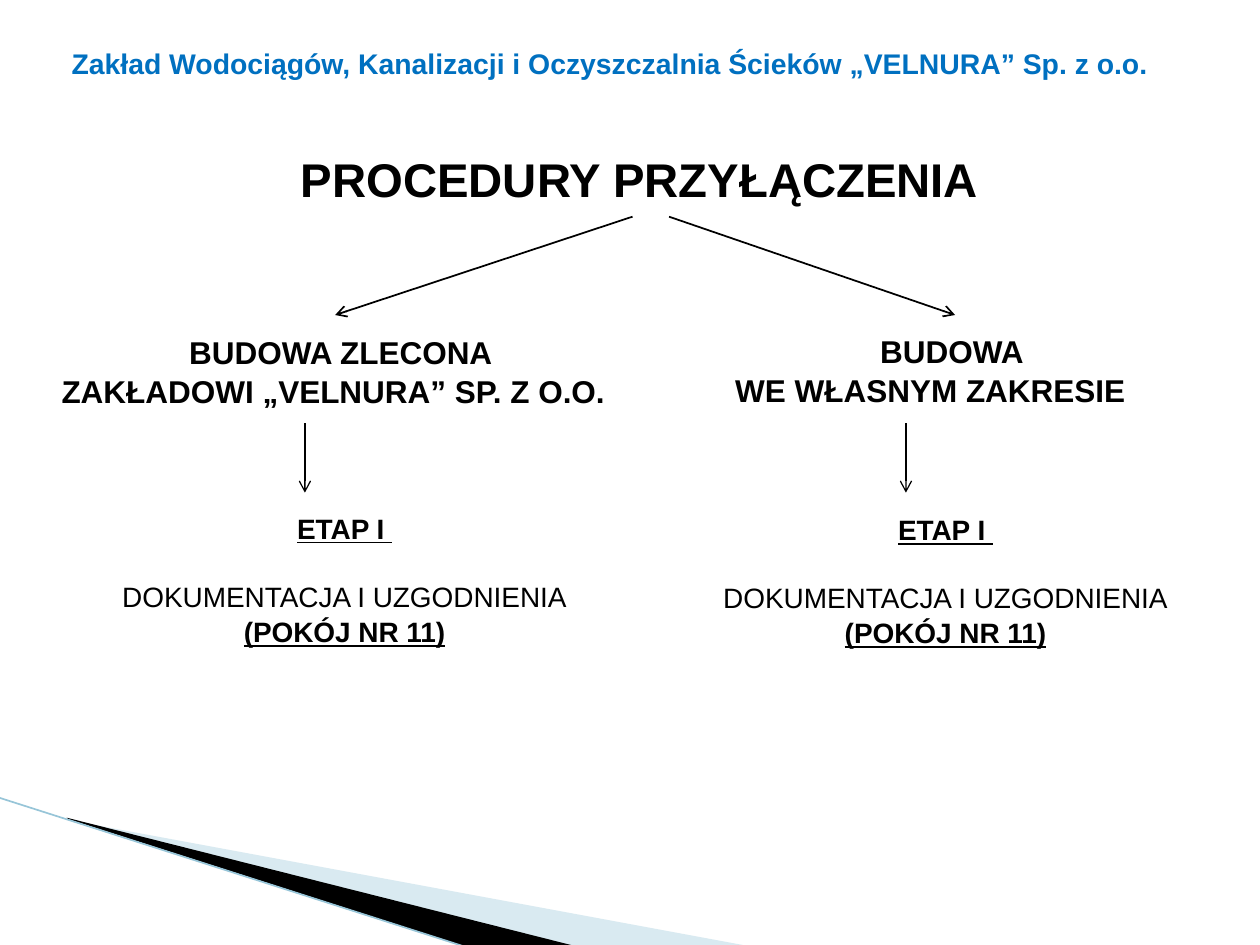
from lxml.etree import SubElement
from pptx import Presentation
from pptx.dml.color import RGBColor
from pptx.enum.shapes import MSO_CONNECTOR as Connector
from pptx.enum.text import PP_ALIGN as Align
from pptx.oxml.ns import qn
from pptx.util import Inches, Pt

BLACK, BLUE, PALE, TEAL = "000000", "0070C0", "A0CBDC", "97C5D8"

COMPANY = "Zakład Wodociągów, Kanalizacji i Oczyszczalnia Ścieków „VELNURA” Sp. z o.o."
HEADING = "PROCEDURY PRZYŁĄCZENIA"
STAGE = [("ETAP I ", True, 0), ("DOKUMENTACJA I UZGODNIENIA", False, 19), ("(POKÓJ NR 11)", True, 0)]
BRANCHES = [
    {"title": ["BUDOWA ZLECONA ", "ZAKŁADOWI „VELNURA” SP. Z O.O.\t"],
     "title_at": (0.39, 2.58, 4.69, 1.01), "stage_at": (0.39, 4, 4.69, 1.35),
     "split": ((5.02, 1.72), (2.66, 2.5)), "down_x": 2.42},
    {"title": ["BUDOWA ", "WE WŁASNYM ZAKRESIE\t"],
     "title_at": (5.63, 2.57, 3.91, 1.01), "stage_at": (5.16, 4.01, 4.69, 1.65),
     "split": ((5.31, 1.72), (7.58, 2.5)), "down_x": 7.19},
]
WEDGES = [
    ([(0.55, 6.51), (5.95, 7.51), (4.56, 7.51), (0.55, 6.5)], PALE, 40),
    ([(0.53, 6.49), (4.57, 7.51), (3.72, 7.52), (0.54, 6.5)], BLACK, 100),
]


def color(value):
    """Turn a hex string into a colour."""
    return RGBColor.from_string(value)


def add_wedge(page, points, fill, opacity):
    """Draw a filled polygon with the given opacity in percent."""
    start, *rest = [(Inches(x), Inches(y)) for x, y in points]
    builder = page.shapes.build_freeform(*start)
    builder.add_line_segments(rest, close=True)
    wedge = builder.convert_to_shape()
    wedge.shadow.inherit = False
    wedge.line.fill.background()
    wedge.fill.solid()
    wedge.fill.fore_color.rgb = color(fill)
    if opacity < 100:
        shade = wedge.fill._xPr.find(".//" + qn("a:srgbClr"))
        SubElement(shade, qn("a:alpha"), val=str(opacity * 1000))


def add_line(page, start, end, stroke, width, arrow=True):
    """Draw a straight line, with an open arrowhead at its end if asked."""
    ends = [Inches(value) for value in (*start, *end)]
    line = page.shapes.add_connector(Connector.STRAIGHT, *ends)
    line.line.color.rgb = color(stroke)
    line.line.width = Pt(width)
    if arrow:
        SubElement(line.line._get_or_add_ln(), qn("a:tailEnd"), type="arrow")
    SubElement(line._element.spPr, qn("a:effectLst"))


def add_text(page, at, lines, size, ink=BLACK, align=Align.CENTER, spacing=1.0):
    """Write lines of (text, bold, underline, space before) and return the text frame."""
    box = page.shapes.add_textbox(*map(Inches, at))
    frame = box.text_frame
    frame.word_wrap = True
    for index, (text, bold, underline, before) in enumerate(lines):
        para = frame.paragraphs[0] if index == 0 else frame.add_paragraph()
        para.text = text
        para.alignment = align
        para.line_spacing = spacing
        if before:
            para.space_before = Pt(before)
        font = para.font
        font.name, font.size, font.bold, font.underline = "Arial", Pt(size), bold, underline
        font.color.rgb = color(ink)
    return frame


def main():
    """Build the slide and save it."""
    deck = Presentation()
    deck.slide_width, deck.slide_height = Inches(10), Inches(7.5)
    page = deck.slides.add_slide(deck.slide_layouts[6])

    for wedge in WEDGES:
        add_wedge(page, *wedge)
    add_line(page, (-0.01, 6.33), (3.71, 7.52), TEAL, 0.95, arrow=False)

    heading = add_text(page, (0.5, 1.09, 9.03, 0.63), [(HEADING, True, False, 0)], 27)
    heading.margin_left, heading.margin_top = Inches(0.22), Inches(0.1)
    add_text(page, (0.47, 0.32, 9.03, 0.63), [(COMPANY, True, False, 0)], 16.2, BLUE, Align.LEFT)

    stage = [(text, strong, strong, before) for text, strong, before in STAGE]
    for branch in BRANCHES:
        title = [(text, True, False, 0) for text in branch["title"]]
        add_text(page, branch["title_at"], title, 18, spacing=1.04)
        add_text(page, branch["stage_at"], stage, 16, spacing=1.04)
        add_line(page, *branch["split"], BLACK, 1)
        add_line(page, (branch["down_x"], 3.36), (branch["down_x"], 3.91), BLACK, 0.75)

    deck.save("out.pptx")


if __name__ == "__main__":
    main()
